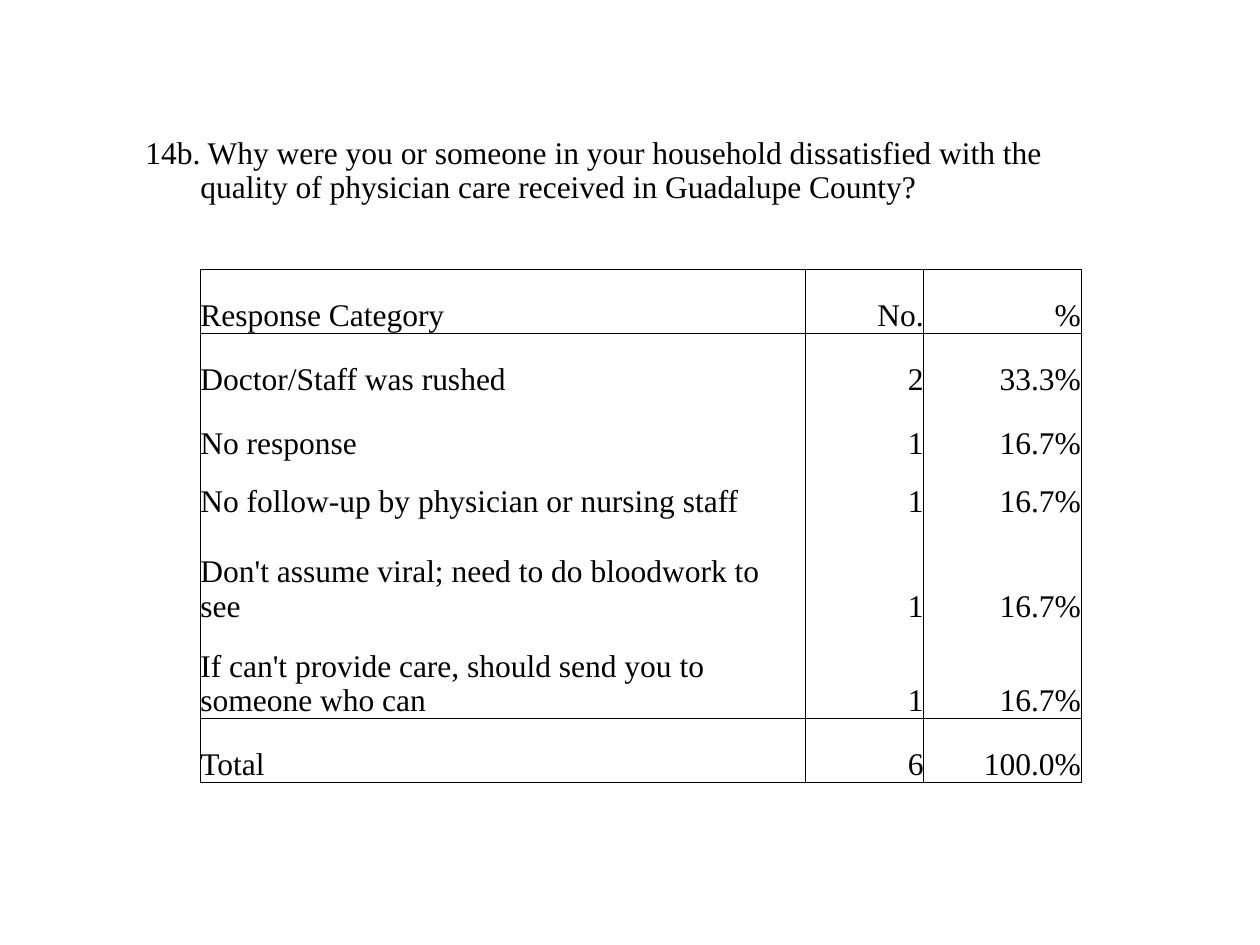
from typing import NamedTuple

from lxml import etree
from pptx import Presentation
from pptx.dml.color import RGBColor
from pptx.enum import text
from pptx.oxml import ns
from pptx.util import Cm, Pt

FONT = "Times New Roman"
INK = "000000"
BORDER = Pt(0.5)


class Response(NamedTuple):
    category: str
    number: str
    percent: str
    height: float  # cm


QUESTION_NUMBER = "14b."
QUESTION = (" Why were you or someone in your household dissatisfied with the "
            "quality of physician care received in Guadalupe County?")
RESPONSES = [
    Response("Response Category", "No.", "%", 1.29),
    Response("Doctor/Staff was rushed", "2", "33.3%", 1.29),
    Response("No response", "1", "16.7%", 1.29),
    Response("No follow-up by physician or nursing staff", "1", "16.7%", 1.17),
    Response("Don't assume viral; need to do bloodwork to see", "1", "16.7%", 2.11),
    Response("If can't provide care, should send you to someone who can", "1", "16.7%", 1.9),
    Response("Total", "6", "100.0%", 1.29),
]
COLUMN_WIDTHS = [1.3, 12.19, 2.39, 3.17]
QUESTION_HEIGHT, SPACER_HEIGHT = 1.27, 1.29
HEADER_ROW = 2
TOTAL_ROW = HEADER_ROW + len(RESPONSES) - 1


def color(hex_value: str) -> RGBColor:
    return RGBColor.from_string(hex_value)


def write(cell, words: str, right: bool = False) -> None:
    cell.text = words
    cell.vertical_anchor = text.MSO_ANCHOR.BOTTOM
    paragraph = cell.text_frame.paragraphs[0]
    paragraph.alignment = text.PP_ALIGN.RIGHT if right else text.PP_ALIGN.LEFT
    paragraph.font.name = FONT
    paragraph.font.size = Pt(18)
    paragraph.font.bold = False
    paragraph.font.color.rgb = color(INK)


def set_borders(cell, sides: str) -> None:
    """Draw the sides named by the letters L, R, T and B; clear the others."""
    properties = cell._tc.get_or_add_tcPr()
    for position, side in enumerate("LRTB"):
        line = etree.Element(ns.qn(f"a:ln{side}"), w=str(BORDER))
        if side in sides:
            fill = etree.SubElement(line, ns.qn("a:solidFill"))
            etree.SubElement(fill, ns.qn("a:srgbClr"), val=INK)
        else:
            etree.SubElement(line, ns.qn("a:noFill"))
        properties.insert(position, line)


def border_sides(row: int, column: int) -> str:
    """Grid lines run around the header, the body and the total."""
    if row < HEADER_ROW:
        return "B" if row == HEADER_ROW - 1 and column > 0 else ""
    if column == 0:
        return "R"
    top = "T" if row in (HEADER_ROW, HEADER_ROW + 1, TOTAL_ROW) else ""
    bottom = "B" if row in (HEADER_ROW, TOTAL_ROW - 1, TOTAL_ROW) else ""
    return "LR" + top + bottom


def main() -> None:
    presentation = Presentation()
    presentation.slide_width, presentation.slide_height = Cm(25.4), Cm(19.05)
    slide = presentation.slides.add_slide(presentation.slide_layouts[6])

    # Table frame
    heights = [QUESTION_HEIGHT, SPACER_HEIGHT] + [r.height for r in RESPONSES]
    table = slide.shapes.add_table(
        len(heights), len(COLUMN_WIDTHS), Cm(2.74), Cm(2.74),
        Cm(sum(COLUMN_WIDTHS)), Cm(sum(heights))).table
    table.first_row = table.horz_banding = False
    for column, width in zip(table.columns, COLUMN_WIDTHS):
        column.width = Cm(width)
    for row, height in zip(table.rows, heights):
        row.height = Cm(height)

    # Cell fills, margins and borders
    for row_index, row in enumerate(table.rows):
        for column_index, cell in enumerate(row.cells):
            cell.fill.background()
            cell.margin_left = cell.margin_right = 0
            cell.margin_top = cell.margin_bottom = 0
            set_borders(cell, border_sides(row_index, column_index))

    # Question
    table.cell(0, 1).merge(table.cell(0, 3))
    write(table.cell(0, 0), QUESTION_NUMBER, right=True)
    table.cell(0, 0).vertical_anchor = text.MSO_ANCHOR.TOP
    write(table.cell(0, 1), QUESTION)

    # Responses
    for row_index, response in enumerate(RESPONSES, HEADER_ROW):
        write(table.cell(row_index, 1), response.category)
        write(table.cell(row_index, 2), response.number, right=True)
        write(table.cell(row_index, 3), response.percent, right=True)

    presentation.save("out.pptx")


if __name__ == "__main__":
    main()
